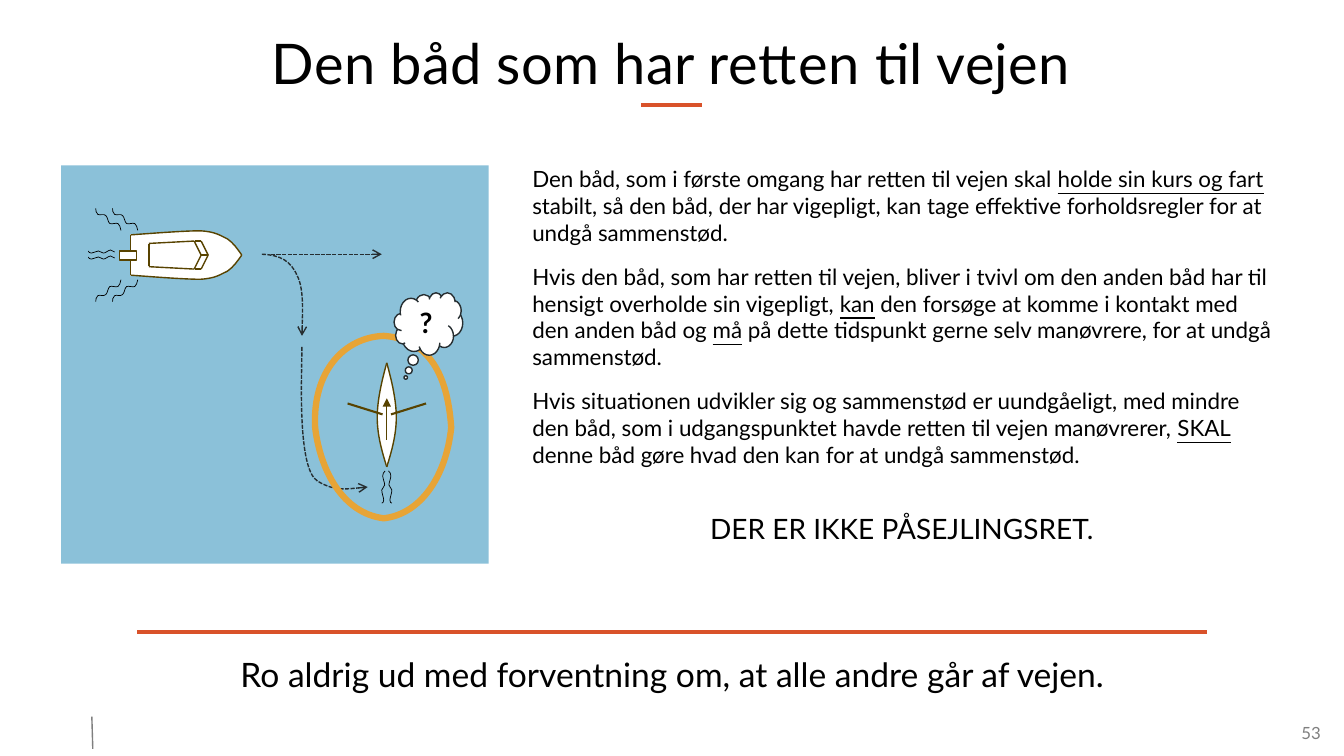
import pptx
import pptx.util
import pptx.dml.color
import pptx.enum.dml
import pptx.enum.shapes
import pptx.enum.text
import pptx.oxml.ns
from lxml import etree

Pt = pptx.util.Pt
RGBColor = pptx.dml.color.RGBColor
ALIGN = pptx.enum.text.PP_ALIGN
ANCHOR = pptx.enum.text.MSO_ANCHOR
SHAPE = pptx.enum.shapes.MSO_SHAPE
qn = pptx.oxml.ns.qn

BLACK = RGBColor(0x00, 0x00, 0x00)
WHITE = RGBColor(0xFF, 0xFF, 0xFF)
GREY = RGBColor(0x7F, 0x7F, 0x7F)
RED = RGBColor(0xD9, 0x52, 0x2A)
WATER = RGBColor(0x8B, 0xC1, 0xD9)
BROWN = RGBColor(0x58, 0x43, 0x00)
INK = RGBColor(0x26, 0x2E, 0x31)
AMBER = RGBColor(0xE7, 0xA4, 0x36)
FONT = "Lato"

# Each curve: a start point, then three points for every cubic segment.
TURN = [(143.3, 63.4), (157, 64), (164, 68.4), (168.5, 78.5), (173.5, 87.8), (172, 121.7), (172, 121.7)]
ASTERN = [(172, 129.6), (172, 150.5), (168.5, 216), (183, 225.4), (196, 233.3), (219, 229.7), (219, 229.7)]
RING = [(181.4, 187.2), (179.3, 146.9), (202.3, 122.8), (230.4, 121.7),
        (259.9, 123.8), (275.8, 145.4), (278.6, 187.2), (275, 221.8), (257, 249), (230.4, 252),
        (200.9, 248.4), (185, 217.4), (181.4, 187.2)]
# Motor boat, measured from its long axis.
HULL = [(129, 0), (126, 4.3), (123, 8.6), (118.8, 11.5), (113.8, 13.7), (110.9, 16.6), (99.4, 17.3),
        (88.6, 17.3), (69, 15.8), (49.7, 14.4)]
CABIN = [(105, 0, 100, 10), (100, 0, 95, 10), (100, 10, 95.5, 10), (95, 10, 62.6, 8.3)]
SPRAY = [(54.7, 17.6), (54, 19.7), (54, 21.8), (52.6, 22.5), (51.1, 23.2), (48.2, 21.8), (46.8, 22.5),
         (45.4, 23.2), (45.4, 26.8), (43.9, 28.2), (42.5, 29.7), (39.6, 28.2), (38.2, 29),
         (36.7, 30.4), (36.7, 31.9), (36.7, 33.3)]
RIPPLE = [(38.2, -2.2), (37.4, -2.9), (36.7, -3.6), (35.3, -3.6), (33.8, -3.6), (31.7, -1.4), (30.2, -1.4),
          (28.8, -1.4), (28.1, -2.9), (26.6, -2.9), (25.2, -2.9), (23, -1.4), (21.6, -1.4),
          (20.2, -1.4), (19.4, -2.2), (19.4, -2.9)]
# Rowing boat, measured from its long axis.
SIDE = [(0, 215.3), (3.6, 203.8), (6.8, 192.2), (6.8, 180), (6.8, 167.8), (3.6, 154), (0, 141)]
WAKE = [(1.2, 218.2), (2.2, 218.9), (2.9, 220.3), (2.9, 221.8), (2.9, 223.2), (1.5, 226.8), (1.5, 228.2),
        (1.5, 229.7), (3.6, 230.4), (3.6, 231.8), (3.6, 234), (2.2, 237.6), (2.2, 239),
        (2.2, 240.5), (2.9, 241.2), (3.6, 241.2)]

# Space before, size, alignment and runs; every second run is underlined.
RULES = [
    (0, 16, ALIGN.LEFT, [
        "Den båd, som i første omgang har retten til vejen skal ", "holde sin kurs og fart ",
        "stabilt, så den båd, der har vigepligt, kan tage effektive forholdsregler for at undgå sammenstød."]),
    (12, 16, ALIGN.LEFT, [
        "Hvis den båd, som har retten til vejen, bliver i tvivl om den anden båd har til hensigt "
        "overholde sin vigepligt, ",
        "kan", " den forsøge at komme i kontakt med den anden båd og ",
        "må", " på dette tidspunkt gerne selv manøvrere, for at undgå sammenstød."]),
    (12, 16, ALIGN.LEFT, [
        "Hvis situationen udvikler sig og sammenstød er uundgåeligt, med mindre den båd, som i "
        "udgangspunktet havde retten til vejen manøvrerer, ",
        "SKAL", " denne båd gøre hvad den kan for at undgå sammenstød."]),
    (31.2, 20, ALIGN.CENTER, ["DER ER IKKE PÅSEJLINGSRET."]),
]


def flip(spots, x, y):
    return [(x * across, y * down) for across, down in spots]


def stroke(shape, color, width, dash=False, head=None):
    shape.line.color.rgb = color
    shape.line.width = Pt(width)
    if dash:
        shape.line.dash_style = pptx.enum.dml.MSO_LINE.SQUARE_DOT
    if head:
        edge = shape._element.spPr.find(qn("a:ln"))
        etree.SubElement(edge, qn("a:tailEnd"), type=head)


def paint(shape, fill):
    shape.shadow.inherit = False
    if fill is None:
        shape.fill.background()
    else:
        shape.fill.solid()
        shape.fill.fore_color.rgb = fill


def bend(shape):
    """Turn every three straight segments of an outline into one cubic."""
    steps = list(shape._element.iter(qn("a:lnTo")))
    for i in range(0, len(steps), 3):
        cubic = etree.Element(qn("a:cubicBezTo"))
        steps[i].addprevious(cubic)
        for step in steps[i:i + 3]:
            cubic.append(step[0])
            step.getparent().remove(step)


def draw(shapes, spots, left, top, color, width, fill=None, closed=False, curved=True, **look):
    spots = [(Pt(left + x), Pt(top + y)) for x, y in spots]
    pen = shapes.build_freeform(*spots[0])
    pen.add_line_segments(spots[1:], close=closed)
    shape = pen.convert_to_shape()
    if curved:
        bend(shape)
    paint(shape, fill)
    stroke(shape, color, width, **look)


def rule(shapes, x1, y1, x2, y2, color, width, **look):
    line = shapes.add_connector(pptx.enum.shapes.MSO_CONNECTOR.STRAIGHT, Pt(x1), Pt(y1), Pt(x2), Pt(y2))
    stroke(line, color, width, **look)
    etree.SubElement(line._element.spPr, qn("a:effectLst"))


def block(shapes, kind, left, top, width, height, fill):
    shape = shapes.add_shape(kind, Pt(left), Pt(top), Pt(width), Pt(height))
    paint(shape, fill)
    shape.line.fill.background()
    return shape


def style(para, size, color=BLACK, align=ALIGN.CENTER):
    para.alignment = align
    para.font.name, para.font.size = FONT, Pt(size)
    para.font.color.rgb = color


def pad(frame, side, edge):
    frame.margin_left = frame.margin_right = Pt(side)
    frame.margin_top = frame.margin_bottom = Pt(edge)
    frame.word_wrap = True


def label(slide, text, left, top, width, height, size, color, align, side, edge):
    frame = slide.shapes.add_textbox(Pt(left), Pt(top), Pt(width), Pt(height)).text_frame
    pad(frame, side, edge)
    frame.text = text
    style(frame.paragraphs[0], size, color, align)


def header(slide, left, top, width, height):
    title = slide.shapes.title
    title.left, title.top, title.width, title.height = Pt(left), Pt(top), Pt(width), Pt(height)
    frame = title.text_frame
    frame.text = "Den båd som har retten til vejen"
    frame.auto_size = pptx.enum.text.MSO_AUTO_SIZE.NONE
    frame.vertical_anchor = ANCHOR.TOP
    pad(frame, 7.2, 3.6)
    para = frame.paragraphs[0]
    para.line_spacing = 0.9
    style(para, 40)
    para.runs[0]._r.get_or_add_rPr().set("spc", "30")
    middle = left + width / 2 + 0.1
    rule(slide.shapes, middle - 21.6, top + 52.6, middle + 21.6, top + 52.6, RED, 3)


def motor(shapes, left, axis):
    draw(shapes, [(129, 0), (49.7, 14.4), (49.7, -14.4)], left, axis, WHITE, 1, WHITE, True, False)
    for side in (1, -1):
        draw(shapes, flip(HULL, 1, side), left, axis, BROWN, 1, WHITE)
    for side in (1, -1):
        for x1, y1, x2, y2 in CABIN:
            rule(shapes, left + x1, axis + side * y1, left + x2, axis + side * y2, BROWN, 1)
        for shift in (0, -12):
            draw(shapes, flip(SPRAY, 1, side), left + shift, axis, BLACK, 0.5)
    for x, reach in ((49.7, 14.4), (62.6, 8.1)):
        rule(shapes, left + x, axis + reach, left + x, axis - reach, BROWN, 1)
    rule(shapes, left + 105, axis, left + 100, axis, BROWN, 1)
    engine = block(shapes, SHAPE.RECTANGLE, left + 41.8, axis - 3, 12.2, 6.5, WHITE)
    stroke(engine, BROWN, 1)
    for shift in (0, 4.3):
        draw(shapes, RIPPLE, left, axis + shift, BLACK, 0.5)


def rower(shapes, axis, top):
    for side in (-1, 1):
        draw(shapes, flip(SIDE, side, 1), axis, top, BROWN, 1, WHITE)
        draw(shapes, flip(WAKE, side, 1), axis, top, BLACK, 0.5)
        rule(shapes, axis + 3 * side, top + 177.8, axis + 28 * side, top + 170, BROWN, 1.5)
    rule(shapes, axis, top + 195.8, axis, top + 166.3, BROWN, 0.5, head="triangle")


def scene(slide, left, top, width, height):
    shapes = slide.shapes.add_group_shape().shapes
    block(shapes, SHAPE.RECTANGLE, left, top, width, height, WATER)
    for course in (TURN, ASTERN):
        draw(shapes, course, left, top, INK, 1, dash=True, head="arrow")
    motor(shapes, left, top + 64)
    rower(shapes, left + 232.6, top)
    draw(shapes, RING, left, top, AMBER, 4.5, closed=True)
    rule(shapes, left + 149.8, top + 63.4, left + 229, top + 63.4, INK, 1, dash=True, head="arrow")
    cloud = block(shapes, SHAPE.CLOUD_CALLOUT, left + 237.8, top + 90.8, 49, 44.6, WHITE)
    cloud.adjustments[0], cloud.adjustments[1] = -0.33, 0.86
    stroke(cloud, INK, 1)
    frame = cloud.text_frame
    pad(frame, 0, 0)
    frame.vertical_anchor = ANCHOR.MIDDLE
    frame.text = "?"
    style(frame.paragraphs[0], 20)
    frame.paragraphs[0].font.bold = True


def body(slide, left, top, width, height):
    frame = slide.shapes.add_textbox(Pt(left), Pt(top), Pt(width), Pt(height)).text_frame
    pad(frame, 3, 0)
    for i, (gap, size, align, parts) in enumerate(RULES):
        para = frame.add_paragraph() if i else frame.paragraphs[0]
        para.space_before = Pt(gap)
        style(para, size, align=align)
        for j, part in enumerate(parts):
            run = para.add_run()
            run.text = part
            if j % 2:
                run.font.underline = True


def footer(slide, left, top, width, height):
    rule(slide.shapes, left + 27.4, top, left + width - 27.4, top, RED, 3)
    label(slide, "Ro aldrig ud med forventning om, at alle andre går af vejen.",
          left, top + 12.3, width, height, 24, BLACK, ALIGN.CENTER, 7.2, 3.6)
    rule(slide.shapes, left - 5, top + 60.5, left - 4.3, top + 83.5, GREY, 1)
    label(slide, "53", left + width + 26.4, top + 64.8, 27.4, 14.4, 12, GREY, ALIGN.RIGHT, 0, 0)


deck = pptx.Presentation()
deck.slide_width, deck.slide_height = Pt(960), Pt(540)
page = deck.slides.add_slide(deck.slide_layouts[5])
header(page, 43.2, 22.3, 872.6, 51)
scene(page, 43.7, 118.2, 305.3, 284.4)
body(page, 377.2, 118.2, 534.2, 293.8)
footer(page, 70.6, 451.4, 819, 36)
deck.save("out.pptx")
